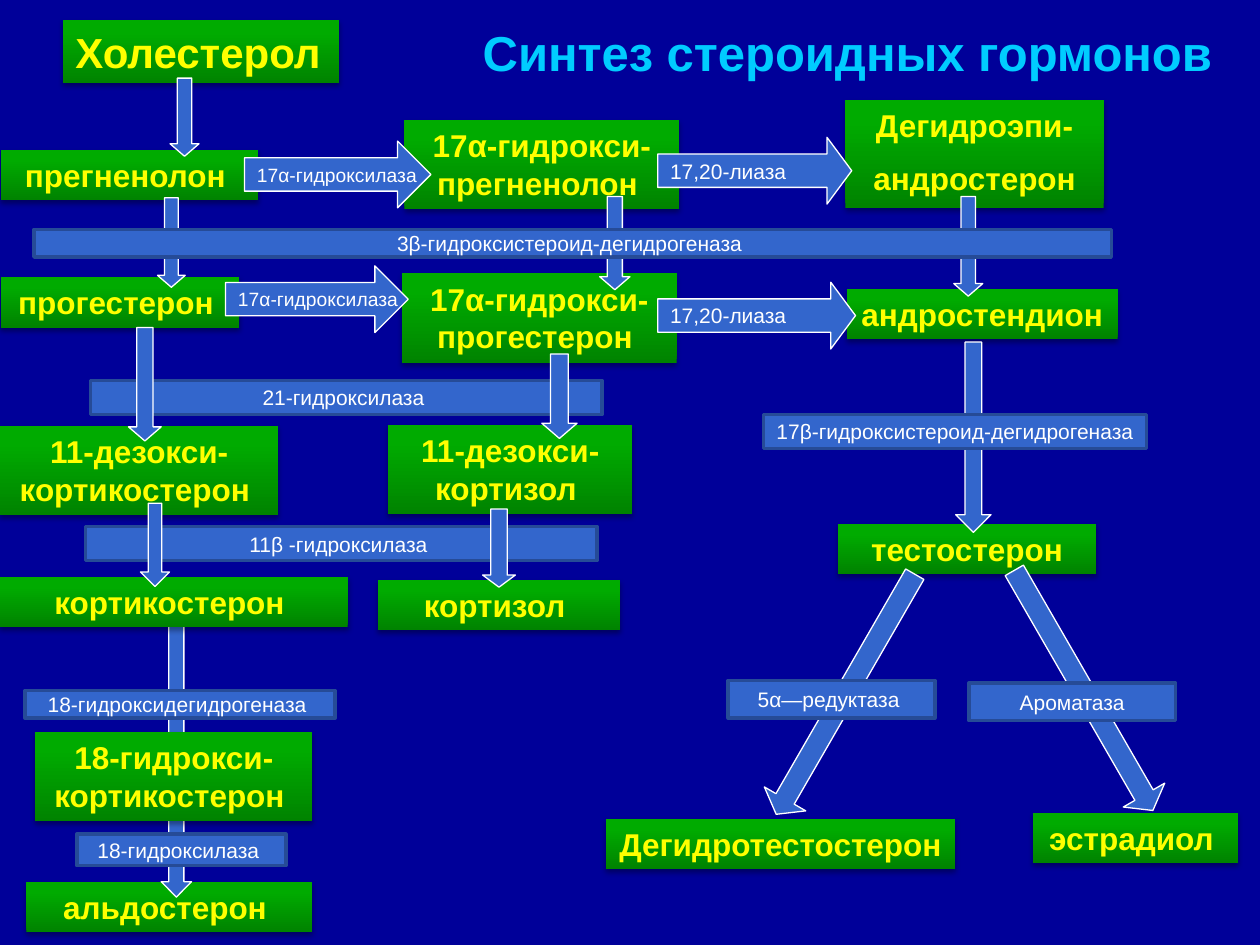
import lxml.etree
import pptx
import pptx.dml.color
import pptx.enum.shapes
import pptx.enum.text
import pptx.oxml.ns
import pptx.util

RGBColor = pptx.dml.color.RGBColor
MSO_SHAPE = pptx.enum.shapes.MSO_SHAPE
PP_ALIGN = pptx.enum.text.PP_ALIGN
MSO_ANCHOR = pptx.enum.text.MSO_ANCHOR
Pt = pptx.util.Pt

NAVY = RGBColor(0x00, 0x00, 0x99)
CYAN = RGBColor(0x00, 0xCC, 0xFF)
YELLOW = RGBColor(0xFF, 0xFF, 0x00)
WHITE = RGBColor(0xFF, 0xFF, 0xFF)
BLUE = RGBColor(0x33, 0x66, 0xCC)
DARK_BLUE = RGBColor(0x26, 0x4B, 0x97)
DARK_GREEN = RGBColor(0x00, 0x83, 0x00)
GREEN = RGBColor(0x00, 0xAB, 0x00)

FONT = "Arial"
CM_PER_INCH = 2.54


def lengths(*inches):
    """Turn the inch grid of the diagram into slide lengths."""
    return [pptx.util.Cm(value * CM_PER_INCH) for value in inches]


def add_soft_shadow(shape):
    effects = shape._element.spPr.find(pptx.oxml.ns.qn("a:effectLst"))
    shadow = lxml.etree.SubElement(
        effects, pptx.oxml.ns.qn("a:outerShdw"), blurRad=str(Pt(3.1)),
        dist=str(Pt(1.8)), dir="5400000", rotWithShape="0")
    color = lxml.etree.SubElement(shadow, pptx.oxml.ns.qn("a:srgbClr"), val="000000")
    lxml.etree.SubElement(color, pptx.oxml.ns.qn("a:alpha"), val="35000")


class Diagram:
    """Style of the synthesis scheme and the slide it is drawn on."""

    def __init__(self, slide):
        self.slide = slide
        background = slide.background.fill
        background.solid()
        background.fore_color.rgb = NAVY

    def style_text(self, paragraph, size, color, bold=False, align=PP_ALIGN.CENTER):
        paragraph.alignment = align
        font = paragraph.font
        font.name, font.size, font.bold = FONT, Pt(size), bold
        font.color.rgb = color

    def title(self, text, *box):
        title = self.slide.shapes.title
        title.left, title.top, title.width, title.height = lengths(*box)
        title.text_frame.text = text
        title.text_frame.vertical_anchor = MSO_ANCHOR.MIDDLE
        self.style_text(title.text_frame.paragraphs[0], 28, CYAN, bold=True)

    def shape(self, kind, box):
        shape = self.slide.shapes.add_shape(kind, *lengths(*box))
        shape.shadow.inherit = False
        return shape

    def blue_shape(self, kind, box, line_color, line_width):
        shape = self.shape(kind, box)
        shape.fill.solid()
        shape.fill.fore_color.rgb = BLUE
        shape.line.color.rgb = line_color
        shape.line.width = Pt(line_width)
        shape.text_frame.vertical_anchor = MSO_ANCHOR.MIDDLE
        return shape

    def hormone(self, text, *box, size=18, align=PP_ALIGN.CENTER):
        shape = self.shape(MSO_SHAPE.RECTANGLE, box)
        add_soft_shadow(shape)
        shape.line.fill.background()
        shape.fill.gradient()
        shape.fill.gradient_angle = 90
        for stop, position, color in zip(
                shape.fill.gradient_stops, (0, 0.8), (DARK_GREEN, GREEN)):
            stop.position = position
            stop.color.rgb = color
        frame = shape.text_frame
        frame.word_wrap = True
        frame.auto_size = pptx.enum.text.MSO_AUTO_SIZE.SHAPE_TO_FIT_TEXT
        frame.vertical_anchor = MSO_ANCHOR.TOP
        frame.text = text
        for paragraph in frame.paragraphs:
            self.style_text(paragraph, size, YELLOW, bold=True, align=align)
        for paragraph in frame.paragraphs[1:]:
            paragraph.space_before = Pt(9)

    def enzyme(self, text, *box):
        shape = self.blue_shape(MSO_SHAPE.RECTANGLE, box, DARK_BLUE, 2)
        shape.text_frame.word_wrap = True
        shape.text_frame.text = text
        self.style_text(shape.text_frame.paragraphs[0], 12, WHITE)

    def arrow(self, kind, box, shaft, head, rotation=0):
        shape = self.blue_shape(kind, box, WHITE, 0.75)
        shape.adjustments[0], shape.adjustments[1] = shaft, head
        shape.rotation = rotation
        return shape

    def down_arrow(self, *box, head=0.43):
        self.arrow(MSO_SHAPE.DOWN_ARROW, box, 0.5, head)

    def turned_arrow(self, *box, rotation=90, shaft=0.47, head=0.5):
        self.arrow(MSO_SHAPE.RIGHT_ARROW, box, shaft, head, rotation)

    def enzyme_arrow(self, text, *box, size, head):
        shape = self.arrow(MSO_SHAPE.RIGHT_ARROW, box, 0.5, head)
        shape.text_frame.word_wrap = False
        shape.text_frame.text = text
        self.style_text(shape.text_frame.paragraphs[0], size, WHITE, align=PP_ALIGN.LEFT)


def main():
    presentation = pptx.Presentation()
    presentation.slide_width, presentation.slide_height = lengths(10, 7.5)
    diagram = Diagram(presentation.slides.add_slide(presentation.slide_layouts[5]))
    diagram.title("Синтез стероидных гормонов", 3.45, 0, 6.55, 0.82)

    diagram.hormone("Холестерол", 0.5, 0.16, 2.19, 0.5, size=24, align=PP_ALIGN.LEFT)
    for hormone in (
        ("Дегидротестостерон ", 4.81, 6.5, 2.77, 0.4),
        ("тестостерон", 6.65, 4.16, 2.05, 0.4),
        ("альдостерон ", 0.21, 7, 2.27, 0.4),
        ("прегненолон ", 0.01, 1.19, 2.04, 0.4),
        ("Дегидроэпи-\nандростерон", 6.71, 0.79, 2.05, 0.86),
        ("прогестерон ", 0.01, 2.2, 1.89, 0.4),
        ("17α-гидрокси-прогестерон ", 3.19, 2.17, 2.18, 0.71),
        ("андростендион ", 6.72, 2.29, 2.15, 0.4),
        ("эстрадиол ", 8.2, 6.45, 1.63, 0.4),
        ("17α-гидрокси-прегненолон ", 3.21, 0.95, 2.18, 0.71),
    ):
        diagram.hormone(*hormone)

    # Arrows that run behind the lower hormones and enzymes
    diagram.down_arrow(1.35, 0.62, 0.23, 0.62)
    diagram.down_arrow(1.28, 4.94, 0.24, 2.18, head=0.51)
    diagram.turned_arrow(6.97, 3.33, 1.51, 0.28)

    for hormone in (
        ("11-дезокси-кортикостерон ", 0, 3.38, 2.21, 0.71),
        ("11-дезокси-кортизол ", 3.08, 3.37, 1.94, 0.71),
        ("кортикостерон ", 0, 4.58, 2.76, 0.4),
        ("кортизол ", 3, 4.6, 1.92, 0.4),
        ("18-гидрокси- кортикостерон ", 0.28, 5.81, 2.2, 0.71),
    ):
        diagram.hormone(*hormone)

    for box in ((1.94, 1.12, 1.48, 0.53), (1.79, 2.11, 1.45, 0.53)):
        diagram.enzyme_arrow("17α-гидроксилаза", *box, size=11, head=0.5)
    for box in ((5.22, 1.09, 1.54, 0.53), (5.22, 2.24, 1.57, 0.53)):
        diagram.enzyme_arrow("17,20-лиаза", *box, size=12, head=0.37)

    # Enzymes crossed by arrows
    diagram.enzyme("21-гидроксилаза ", 0.72, 3.02, 4.06, 0.27)
    diagram.enzyme("11β -гидроксилаза ", 0.68, 4.18, 4.06, 0.27)

    for box in (
        (1.02, 2.6, 0.26, 0.9),
        (4.3, 2.81, 0.28, 0.67),
        (1.25, 1.57, 0.22, 0.71),
        (7.57, 1.56, 0.23, 0.79),
        (4.76, 1.56, 0.24, 0.74),
    ):
        diagram.down_arrow(*box)
    diagram.turned_arrow(0.9, 4.21, 0.66, 0.23)
    diagram.turned_arrow(3.65, 4.22, 0.62, 0.26, shaft=0.5, head=0.37)
    diagram.turned_arrow(5.61, 5.32, 2.2, 0.38, rotation=120, shaft=0.44, head=0.37)
    diagram.turned_arrow(7.5, 5.29, 2.2, 0.38, rotation=60, shaft=0.44, head=0.37)

    # Enzymes that cover arrows
    for enzyme in (
        ("18-гидроксидегидрогеназа ", 0.2, 5.48, 2.46, 0.22),
        ("18-гидроксилаза ", 0.61, 6.62, 1.66, 0.25),
        ("3β-гидроксистероид-дегидрогеназа ", 0.27, 1.82, 8.55, 0.22),
        ("17β-гидроксистероид-дегидрогеназа ", 6.06, 3.29, 3.04, 0.27),
        ("5α—редуктаза ", 5.78, 5.4, 1.64, 0.3),
        ("Ароматаза", 7.69, 5.42, 1.64, 0.3),
    ):
        diagram.enzyme(*enzyme)

    presentation.save("out.pptx")


if __name__ == "__main__":
    main()
